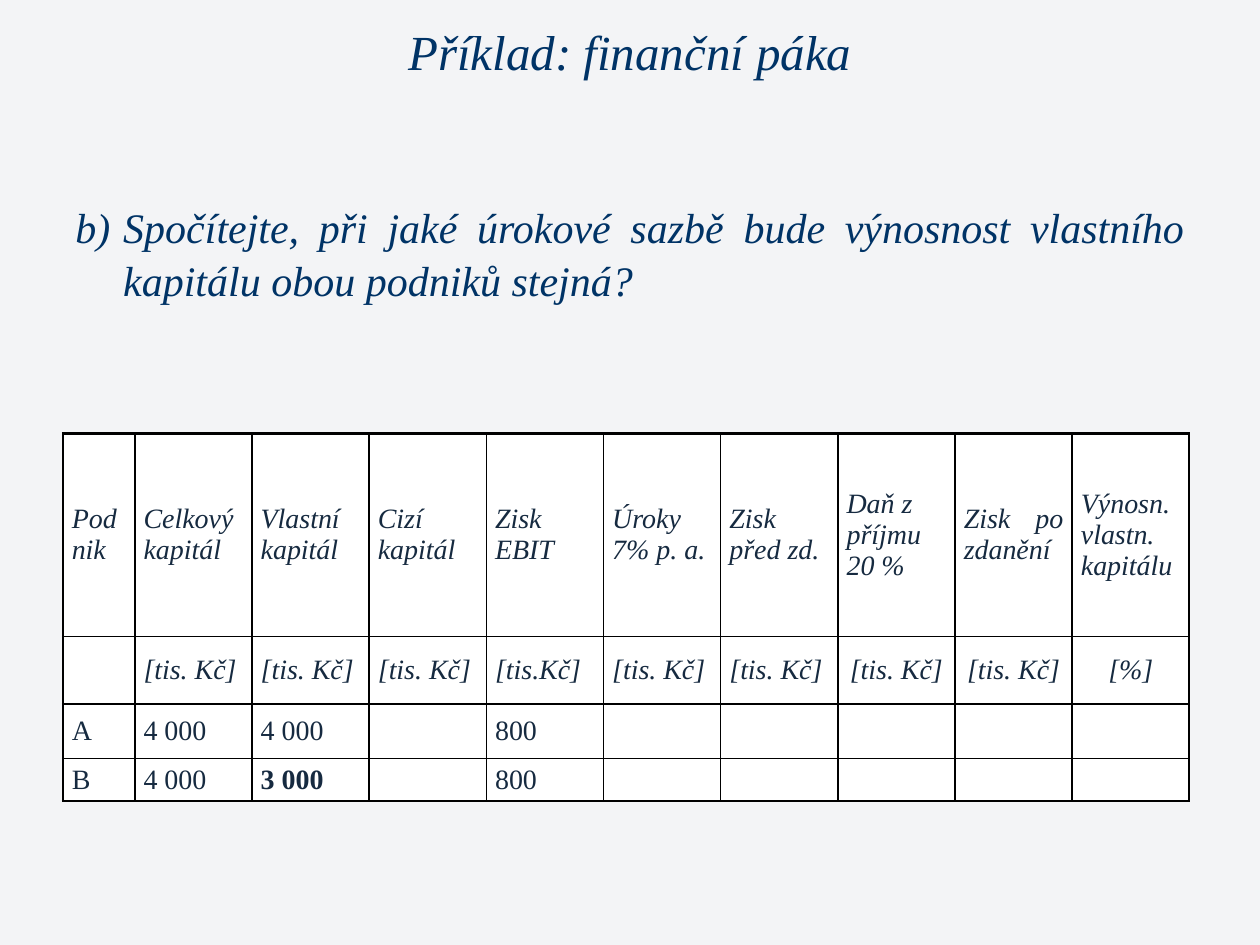
import pptx
import pptx.util
import pptx.dml.color
import pptx.enum.text
import pptx.oxml
import pptx.oxml.ns
from lxml import etree

TITLE = "Příklad: finanční páka"
QUESTION = ("Spočítejte, při jaké úrokové sazbě bude výnosnost "
            "vlastního kapitálu obou podniků stejná?")
UNIT = "[tis. Kč]"
ROWS = [
    ["Podnik", "Celkový\nkapitál", "Vlastní kapitál", "Cizí kapitál", "Zisk EBIT",
     "Úroky\n7% p. a.", "Zisk před zd.", "Daň z příjmu\n20 %", "Zisk po zdanění",
     "Výnosn. vlastn.\nkapitálu"],
    ["", UNIT, UNIT, UNIT, "[tis.Kč]", UNIT, UNIT, UNIT, UNIT, "[%]"],
    ["A", "4 000", "4 000", "", "800", "", "", "", "", ""],
    ["B", "4 000", "3 000", "", "800", "", "", "", "", ""],
]
COL_WIDTHS = [0.57] + [0.93] * 9
ROW_HEIGHTS = [1.61, 0.54, 0.43, 0.34]
HEADER_ROWS = 2
TAX_COL = 7
BOLD_CELL = (3, 2)
FONT = "Times New Roman"
COLORS = {"back": "F3F4F6", "navy": "003366", "ink": "162A40",
          "cell": "FFFFFF", "line": "000000"}
ALIGN = pptx.enum.text.PP_ALIGN
MIDDLE = pptx.enum.text.MSO_ANCHOR.MIDDLE
INCH = pptx.util.Inches


def rgb(name):
    return pptx.dml.color.RGBColor.from_string(COLORS[name])


def format_text(tf, size, color, align, italic=True, bold=False):
    for p in tf.paragraphs:
        p.alignment = align
        for r in p.runs:
            r.font.name = FONT
            r.font.size = pptx.util.Pt(size)
            r.font.italic = italic
            r.font.bold = bold
            r.font.color.rgb = rgb(color)


def set_borders(cell, widths):
    tcPr = cell._tc.get_or_add_tcPr()
    for i, (side, width) in enumerate(widths.items()):
        ln = pptx.oxml.parse_xml(
            f'<a:ln{side} {pptx.oxml.ns.nsdecls("a")} w="{pptx.util.Pt(width)}">'
            f'<a:solidFill><a:srgbClr val="{COLORS["line"]}"/></a:solidFill>'
            f'</a:ln{side}>')
        tcPr.insert(i, ln)


def cell_align(row, col):
    if row == 0 and col == TAX_COL:
        return ALIGN.LEFT
    if row == 1:
        return ALIGN.CENTER if col >= TAX_COL else ALIGN.LEFT
    return ALIGN.JUSTIFY


def add_title(s):
    sp = s.shapes.title
    sp.left, sp.top, sp.width, sp.height = map(INCH, (0.5, 0.21, 9, 0.39))
    tf = sp.text_frame
    tf.text = TITLE
    tf.vertical_anchor = MIDDLE
    format_text(tf, 28, "navy", ALIGN.CENTER)


def add_table(s):
    last_row, last_col = len(ROWS) - 1, len(COL_WIDTHS) - 1
    table = s.shapes.add_table(
        len(ROWS), len(COL_WIDTHS), INCH(0.5), INCH(3.44),
        INCH(sum(COL_WIDTHS)), INCH(sum(ROW_HEIGHTS))).table
    for column, width in zip(table.columns, COL_WIDTHS):
        column.width = INCH(width)
    for row, height in zip(table.rows, ROW_HEIGHTS):
        row.height = INCH(height)
    for i, texts in enumerate(ROWS):
        for j, text in enumerate(texts):
            cell = table.cell(i, j)
            cell.text = text
            cell.vertical_anchor = MIDDLE
            cell.margin_left = cell.margin_right = INCH(0.07)
            cell.margin_top = cell.margin_bottom = 0
            cell.fill.solid()
            cell.fill.fore_color.rgb = rgb("cell")
            format_text(cell.text_frame, 16, "ink", cell_align(i, j),
                        italic=i < HEADER_ROWS, bold=(i, j) == BOLD_CELL)
            thick = {"L": j == 0, "R": j == last_col,
                     "T": i in (0, HEADER_ROWS),
                     "B": i in (HEADER_ROWS - 1, last_row)}
            set_borders(cell, {side: 1.5 if on else 1 for side, on in thick.items()})


def add_question(s):
    tf = s.shapes.add_textbox(*map(INCH, (0.5, 1.53, 9, 0.91))).text_frame
    tf.word_wrap = True
    tf.text = QUESTION
    format_text(tf, 24, "navy", ALIGN.JUSTIFY)
    p = tf.paragraphs[0]
    p.line_spacing = 1.05
    pPr = p._p.get_or_add_pPr()
    pPr.set("marL", str(INCH(0.38)))
    pPr.set("indent", str(-INCH(0.38)))
    etree.SubElement(pPr, pptx.oxml.ns.qn("a:buAutoNum"),
                     type="alphaLcParenR", startAt="2")


def main():
    prs = pptx.Presentation()
    prs.slide_width, prs.slide_height = INCH(10), INCH(7.5)
    s = prs.slides.add_slide(prs.slide_layouts[5])
    s.background.fill.solid()
    s.background.fill.fore_color.rgb = rgb("back")
    add_title(s)
    add_table(s)
    add_question(s)
    prs.save("out.pptx")


if __name__ == "__main__":
    main()
